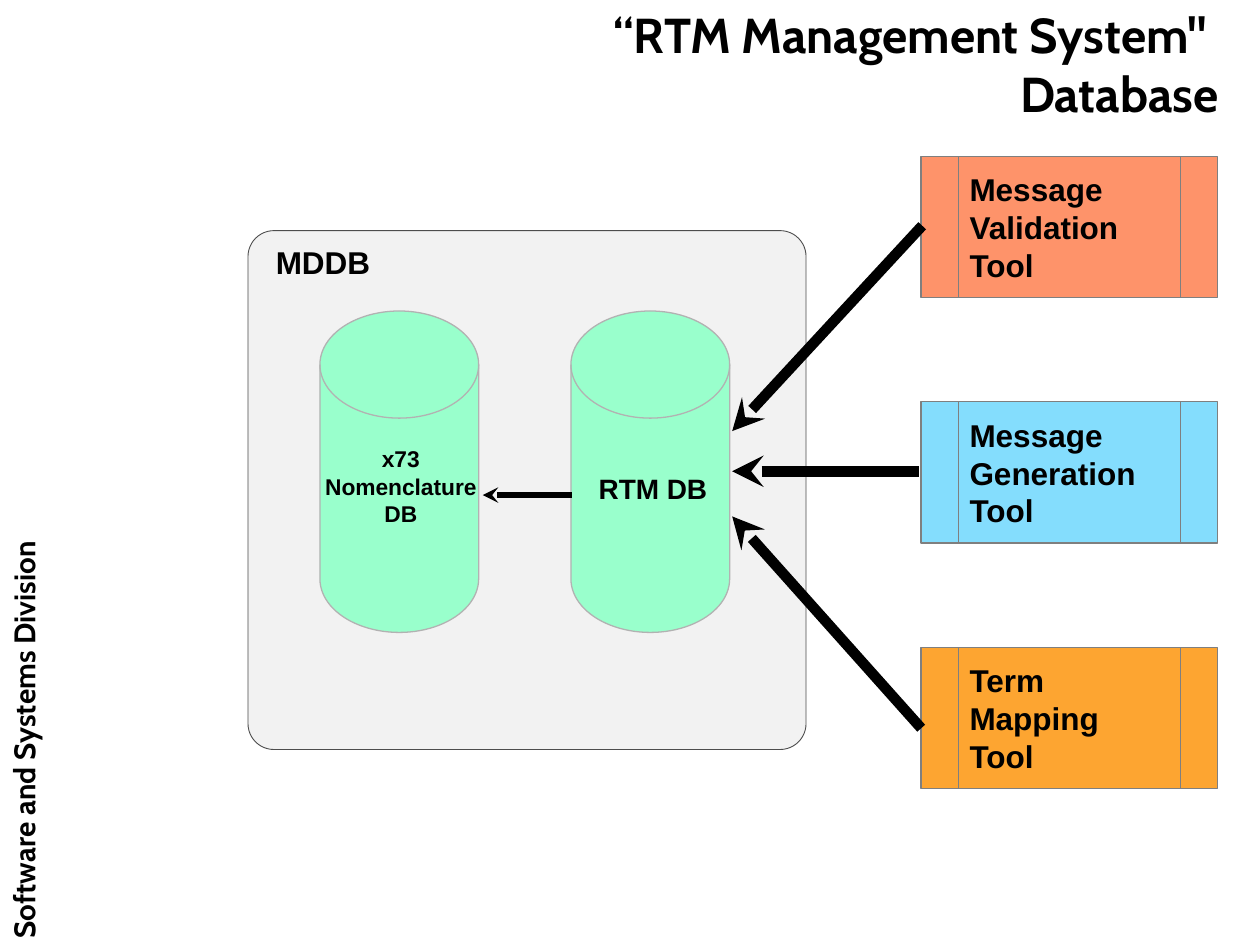
import pptx
import pptx.util
import pptx.dml.color
import pptx.enum.shapes
import pptx.enum.text
import pptx.oxml
import pptx.oxml.ns
from pptx.util import Cm

SHAPES = pptx.enum.shapes.MSO_SHAPE
ALIGN = pptx.enum.text.PP_ALIGN
ANCHOR = pptx.enum.text.MSO_ANCHOR

# Theme: fonts, type sizes (pt), colours
THEME = {
    "heading_font": "Cabin", "body_font": "Arial",
    "title": 28, "division": 17, "label": 18, "rtm": 16, "nomenclature": 13,
    "text": "000000", "arrow": "000000",
    "panel": "F2F2F2", "panel_line": "4D4D4D",
    "database": "99FFCC", "database_line": "B2B2B2",
    "tool_line": "7F7F7F",
}

# Content (lengths in cm)
TITLE = "“RTM Management System\" \vDatabase"
DIVISION = "Software and Systems Division"
PANEL_BOX = (5, 4.65, 11.25, 10.46)
DATABASE_LEFTS = (11.51, 6.45)
DATABASE_TOP, DATABASE_WIDTH, DATABASE_HEIGHT = 6.27, 3.2, 6.48
LABELS = [  # text, box, size, alignment
    ("MDDB", (5.56, 4.9, 3.35, 0.91), "label", ALIGN.LEFT),
    ("RTM DB", (12.07, 9.5, 3.33, 0.81), "rtm", ALIGN.LEFT),
    ("x73 Nomenclature DB", (6.25, 8.97, 3.66, 1.91), "nomenclature", ALIGN.CENTER),
]
TOOLS = [
    ("Message Validation Tool", "FE936A"),
    ("Message Generation Tool", "84DDFD"),
    ("Term Mapping Tool", "FDA531"),
]
TOOL_LEFT, TOOL_TOP, TOOL_WIDTH, TOOL_HEIGHT = 18.57, 3.15, 5.97, 2.85
TOOL_PITCH = 4.95
ARROWS = [  # pointed end, plain end, width in pt
    ((9.73, 9.98), (11.53, 9.98), 3),
    ((14.76, 8.69), (18.59, 4.55), 6),
    ((14.76, 9.5), (18.52, 9.5), 6),
    ((14.76, 10.41), (18.57, 14.68), 6),
]


def rgb(value):
    return pptx.dml.color.RGBColor.from_string(value)


def cm(values):
    return [Cm(value) for value in values]


def write(frame, text, size, font="body_font", align=ALIGN.LEFT, margins=(0, 0, 0, 0)):
    frame.text = text
    frame.word_wrap = True
    (frame.margin_left, frame.margin_top,
     frame.margin_right, frame.margin_bottom) = cm(margins)
    for paragraph in frame.paragraphs:
        paragraph.alignment = align
        for run in paragraph.runs:
            run.font.name = THEME[font]
            run.font.size = pptx.util.Pt(THEME[size])
            run.font.bold = True
            run.font.color.rgb = rgb(THEME["text"])


def add_block(slide, preset, box, fill, line, width):
    block = slide.shapes.add_shape(preset, *cm(box))
    block.shadow.inherit = False
    block.fill.solid()
    block.fill.fore_color.rgb = rgb(fill)
    block.line.color.rgb = rgb(line)
    block.line.width = pptx.util.Pt(width)
    return block


def add_arrow(slide, tip, start, width):
    arrow = slide.shapes.add_connector(
        pptx.enum.shapes.MSO_CONNECTOR.STRAIGHT, *cm(tip + start))
    arrow.line.color.rgb = rgb(THEME["arrow"])
    arrow.line.width = pptx.util.Pt(width)
    namespace = pptx.oxml.ns.nsdecls("a")
    arrow.line._get_or_add_ln().append(
        pptx.oxml.parse_xml(f'<a:headEnd {namespace} type="stealth"/>'))
    arrow._element.spPr.append(pptx.oxml.parse_xml(f"<a:effectLst {namespace}/>"))


def main():
    deck = pptx.Presentation()
    deck.slide_width, deck.slide_height = Cm(25.4), Cm(19.05)
    slide = deck.slides.add_slide(deck.slide_layouts[5])

    # Division name up the left edge
    division = slide.shapes.add_textbox(*cm((-8.33, 9.88, 17.6, 0.97)))
    division.rotation = 270
    write(division.text_frame, DIVISION, "division", "heading_font",
          margins=(0.25, 0.13, 0.25, 0.13))

    # Title
    title = slide.shapes.title
    title.left, title.top, title.width, title.height = cm((4.72, 0.36, 20.09, 1.85))
    write(title.text_frame, TITLE, "title", "heading_font", ALIGN.RIGHT,
          (0.25, 0.13, 0.25, 0.13))
    title.text_frame.vertical_anchor = ANCHOR.MIDDLE
    title.text_frame.auto_size = pptx.enum.text.MSO_AUTO_SIZE.NONE

    # MDDB panel with its two databases
    panel = add_block(slide, SHAPES.ROUNDED_RECTANGLE, PANEL_BOX,
                      THEME["panel"], THEME["panel_line"], 0.5)
    panel.adjustments[0] = 0.05
    for left in DATABASE_LEFTS:
        add_block(slide, SHAPES.FLOWCHART_MAGNETIC_DISK,
                  (left, DATABASE_TOP, DATABASE_WIDTH, DATABASE_HEIGHT),
                  THEME["database"], THEME["database_line"], 0.75)
    for text, box, size, align in LABELS:
        label = slide.shapes.add_textbox(*cm(box))
        write(label.text_frame, text, size, align=align)

    # Tools
    for row, (text, fill) in enumerate(TOOLS):
        box = (TOOL_LEFT, TOOL_TOP + row * TOOL_PITCH, TOOL_WIDTH, TOOL_HEIGHT)
        tool = add_block(slide, SHAPES.FLOWCHART_PREDEFINED_PROCESS, box,
                         fill, THEME["tool_line"], 0.75)
        write(tool.text_frame, text, "label", margins=(0.23, 0, 0.23, 0))
        tool.text_frame.vertical_anchor = ANCHOR.MIDDLE

    # Arrows
    for tip, start, width in ARROWS:
        add_arrow(slide, tip, start, width)

    deck.save("out.pptx")


if __name__ == "__main__":
    main()
